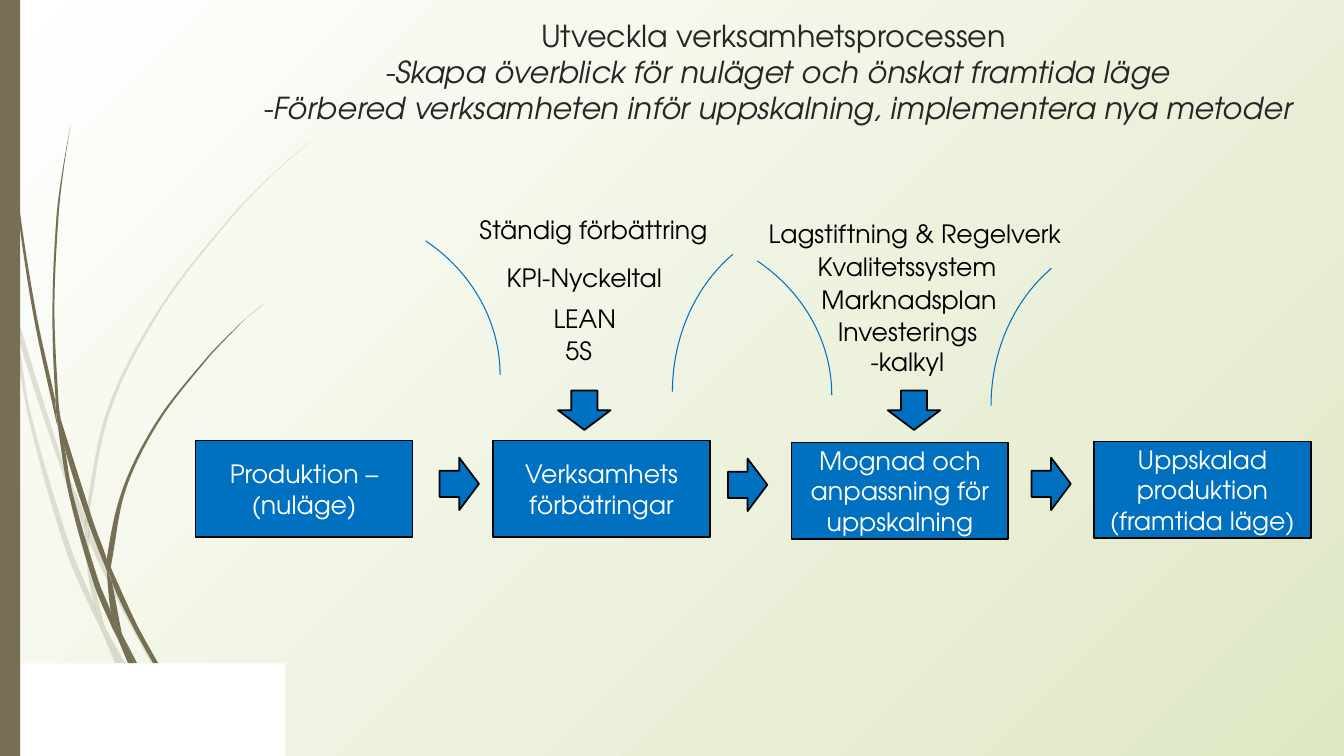
import math

import pptx
import pptx.dml.color
import pptx.enum.shapes
import pptx.enum.text
import pptx.oxml
import pptx.oxml.ns
import pptx.util

Inches = pptx.util.Inches
RGBColor = pptx.dml.color.RGBColor
SHAPES = pptx.enum.shapes.MSO_SHAPE
ANCHOR = pptx.enum.text.MSO_ANCHOR
CENTER = pptx.enum.text.PP_ALIGN.CENTER
qn = pptx.oxml.ns.qn
FONT = "TeX Gyre Adventor"
BLUE = RGBColor(0x00, 0x70, 0xC0)
BLACK = RGBColor(0x00, 0x00, 0x00)
WHITE = RGBColor(0xFF, 0xFF, 0xFF)
DARK_GREY = RGBColor(0x26, 0x26, 0x26)
OLIVE = RGBColor(0x76, 0x6F, 0x54)
PALE_GREEN = RGBColor(0xDF, 0xE8, 0xC4)

# Outline points of the grass blades, in inches.
PALE_BLADES = [
    [(.11, 3.09), (.09, 2.84), (0, 2.49), (0, 2.64), (.1, 3.03)],
    [(.58, 4.58), (.84, 5.26), (.85, 5.14), (.62, 4.57), (.14, 3.04), (.17, 3.31)],
    [(.92, 5.33), (.88, 5.23), (.88, 5.36), (1.23, 6.08), (1.5, 6.58), (1.55, 6.58), (1.27, 6.06)],
    [(1.19, 6.58), (1.24, 6.58), (1.05, 6.24)],
    [(.93, 5.99), (.7, 5.43), (.31, 4.12), (.17, 3.31), (.11, 3.09), (.28, 4.13), (.65, 5.45),
     (.92, 6.08), (1.01, 6.26), (.99, 6.2)],
    [(.84, 5.26), (.87, 5.67), (.93, 5.99), (.96, 6.07), (1.05, 6.24), (1.03, 6.19), (.91, 5.66),
     (.88, 5.36), (.88, 5.34)],
    [(.88, 5.12), (1.1, 4.06), (1.6, 3.07), (2.29, 2.17), (2.68, 1.76), (2.9, 1.56), (3.12, 1.37),
     (2.89, 1.56), (2.68, 1.75), (2.28, 2.16), (1.58, 3.06), (1.07, 4.05), (.85, 5.12), (.88, 5.23)],
    [(1.01, 6.26), (1.14, 6.58), (1.19, 6.58)],
    [(.88, 5.34), (.88, 5.23), (.85, 5.14), (.84, 5.26)],
    [(.96, 6.07), (.93, 5.99), (.99, 6.2), (1.01, 6.26), (1.19, 6.58), (1.05, 6.24)],
]
DARK_BLADES = [
    [(.07, .96), (.17, 2.04), (.33, 3.12), (.56, 4.19), (.57, 4.23), (.55, 4.02), (.55, 3.98),
     (.36, 3.11), (.19, 2.04), (.08, .96), (.05, .42), (.04, 0), (.03, 0), (.04, .42)],
    [(.88, 5.2), (1.06, 5.66), (1.06, 5.55), (.93, 5.19), (.6, 4.15), (.64, 4.44)],
    [(1.13, 5.7), (1.1, 5.63), (1.11, 5.77), (1.32, 6.22), (1.52, 6.58), (1.57, 6.58), (1.36, 6.2)],
    [(1.1, 6.07), (.98, 5.77), (.72, 4.89), (.64, 4.44), (.57, 4.19), (.68, 4.89), (.93, 5.79),
     (1.11, 6.22), (1.17, 6.34), (1.16, 6.3)],
    [(.6, 4.15), (.58, 3.98), (.54, 3.07), (.58, 2.15), (.63, 1.69), (.7, 1.24), (.62, 1.69),
     (.56, 2.15), (.52, 3.07), (.55, 3.94), (.6, 4.14)],
    [(1.33, 6.58), (1.36, 6.58), (1.22, 6.31)],
    [(.57, 4.19), (.64, 4.44), (.6, 4.15), (.55, 3.95), (.55, 3.98)],
    [(1.11, 5.56), (1.25, 4.85), (1.58, 4.18), (2.05, 3.57), (2.31, 3.29), (2.45, 3.15), (2.61, 3.02),
     (2.45, 3.15), (2.31, 3.28), (2.04, 3.56), (1.56, 4.17), (1.22, 4.84), (1.06, 5.54), (1.1, 5.63)],
    [(1.17, 6.34), (1.27, 6.58), (1.31, 6.58)],
    [(1.06, 5.66), (1.1, 6.07), (1.16, 6.2), (1.22, 6.31), (1.21, 6.29), (1.11, 5.77), (1.09, 5.72)],
    [(1.06, 5.66), (1.09, 5.71), (1.11, 5.76), (1.1, 5.63), (1.06, 5.55)],
    [(1.16, 6.2), (1.1, 6.07), (1.16, 6.3), (1.17, 6.34), (1.3, 6.58), (1.33, 6.58), (1.22, 6.31)],
]
TITLE_LINES = [
    "Utveckla verksamhetsprocessen ",
    "-Skapa överblick för nuläget och önskat framtida läge",
    "-Förbered verksamheten inför uppskalning, implementera nya metoder"]
STAGES = [
    (1.94, 4.37, ["Produktion –(nuläge)"]), (4.89, 4.37, ["Verksamhets", "förbätringar"]),
    (7.85, 4.39, ["Mognad och anpassning för uppskalning"]),
    (10.85, 4.38, ["Uppskalad produktion", "(framtida läge)"])]
STAGE_ARROWS = [(4.36, 4.54), (7.22, 4.55), (10.23, 4.54)]
IMPROVEMENT_LABELS = [
    (4.46, 1.96, 2.85, .63, "Ständig förbättring"), (4.55, 2.27, 2.49, .96, "KPI-Nyckeltal"),
    (4.84, 2.84, 1.92, .63, "LEAN"), (4.78, 3.13, 1.92, .7, "5S")]
MATURITY_LABELS = [
    (7.37, 2, 3.41, .63, "Lagstiftning & Regelverk"), (7.75, 2.37, 2.49, .54, "Kvalitetssystem"),
    (7.96, 2.62, 2.11, .7, "Marknadsplan"), (8.19, 3.12, 1.62, .63, "Investerings -kalkyl")]

def add_run(para, text, size=18, color=BLACK, italic=False):
    span = para.add_run()
    span.text = text
    span.font.name = FONT
    span.font.size = pptx.util.Pt(size)
    span.font.color.rgb = color
    span.font.italic = italic

def style_shape(shape, fill=None, line=None, weight=1.25):
    shape.shadow.inherit = False
    for paint, color in ((shape.fill, fill), (shape.line.fill, line)):
        if color is None:
            paint.background()
        else:
            paint.solid()
            paint.fore_color.rgb = color
    if line is not None:
        shape.line.width = pptx.util.Pt(weight)

def add_shape(slide, kind, *box, **style):
    shape = slide.shapes.add_shape(kind, *map(Inches, box))
    style_shape(shape, **style)
    return shape

def add_text_shape(slide, box, lines, color=BLACK, **style):
    shape = add_shape(slide, SHAPES.FLOWCHART_PROCESS, *box, **style)
    frame = shape.text_frame
    frame.word_wrap = True
    frame.vertical_anchor = ANCHOR.MIDDLE
    for index, line in enumerate(lines):
        para = frame.add_paragraph() if index else frame.paragraphs[0]
        para.alignment = CENTER
        add_run(para, line, color=color)

def add_arrow(slide, left, top, rotation=0):
    arrow = add_shape(slide, SHAPES.RIGHT_ARROW, left, top, .39, .52, fill=BLUE, line=BLACK)
    arrow.rotation = rotation

def add_arc(slide, *box, start, mirrored=False):
    arc = add_shape(slide, SHAPES.ARC, *box, line=BLUE, weight=.75)
    arc.adjustments[0], arc.adjustments[1] = start, 0
    if mirrored:
        arc.element.spPr.find(qn("a:xfrm")).set("flipH", "1")

def tangent(before, point, after):
    """Return the unit direction through a point, or none at a sharp corner."""
    turn = (math.atan2(after[1] - point[1], after[0] - point[0])
            - math.atan2(point[1] - before[1], point[0] - before[0]))
    if math.cos(turn) < .7:
        return 0, 0
    dx, dy = after[0] - before[0], after[1] - before[1]
    return dx / math.hypot(dx, dy), dy / math.hypot(dx, dy)

def round_edges(blade):
    """Turn the straight sides of a closed freeform into curves."""
    sides = list(blade.element.iter(qn("a:lnTo")))
    points = [(int(side[0].get("x")), int(side[0].get("y"))) for side in sides]
    count = len(points)
    slopes = [tangent(points[i - 1], points[i], points[(i + 1) % count]) for i in range(count)]
    for index, side in enumerate(sides):
        start, end = points[index - 1], points[index]
        third = math.dist(start, end) / 3
        controls = [[p + s * third for p, s in zip(start, slopes[index - 1])],
                    [p - s * third for p, s in zip(end, slopes[index])], end]
        marks = "".join(f'<a:pt x="{round(x)}" y="{round(y)}"/>' for x, y in controls)
        side.getparent().replace(side, pptx.oxml.parse_xml(
            f'<a:cubicBezTo {pptx.oxml.ns.nsdecls("a")}>{marks}</a:cubicBezTo>'))

def add_blade(slide, outline, opacity):
    points = [(Inches(x), Inches(y)) for x, y in outline]
    builder = slide.shapes.build_freeform(*points[0])
    builder.add_line_segments(points[1:] + points[:1], close=True)
    blade = builder.convert_to_shape()
    style_shape(blade, fill=OLIVE)
    round_edges(blade)
    if opacity < 100:
        blade.element.spPr.find(".//" + qn("a:srgbClr")).append(pptx.oxml.parse_xml(
            f'<a:alpha {pptx.oxml.ns.nsdecls("a")} val="{opacity * 1000}"/>'))

def paint_background(slide):
    """Fill with a gradient that spreads from the top left corner."""
    fill = slide.background.fill
    fill.gradient()
    for stop, color in zip(fill.gradient_stops, (WHITE, PALE_GREEN)):
        stop.color.rgb = color
    gradient = slide.element.find(".//" + qn("a:gradFill"))
    gradient.replace(gradient.find(qn("a:lin")), pptx.oxml.parse_xml(
        f'<a:path {pptx.oxml.ns.nsdecls("a")} path="circle">'
        '<a:fillToRect r="100000" b="100000"/></a:path>'))

def draw_decoration(slide):
    for blades, opacity in ((PALE_BLADES, 20), (DARK_BLADES, 100)):
        for outline in blades:
            add_blade(slide, outline, opacity)
    add_shape(slide, SHAPES.RECTANGLE, 0, 0, .2, 7.5, fill=OLIVE)
    add_shape(slide, SHAPES.RECTANGLE, .21, 6.58, 2.62, .92, fill=WHITE)

def fill_title(title, *box):
    title.left, title.top, title.width, title.height = map(Inches, box)
    frame = title.text_frame
    frame.word_wrap = True
    frame.auto_size = pptx.enum.text.MSO_AUTO_SIZE.NONE
    frame.vertical_anchor = ANCHOR.TOP
    para = frame.paragraphs[0]
    para.alignment = CENTER
    for index, line in enumerate(TITLE_LINES):
        if index:
            para.add_line_break()
        add_run(para, line, size=21.6, color=DARK_GREY, italic=index > 0)

def draw_funnel(slide, left_arc, right_arc, arrow_left, labels):
    """Draw labels between two arcs, with an arrow down to the stage below."""
    add_arc(slide, *left_arc, 3.67, 3.32, start=185.71)
    add_arc(slide, *right_arc, 2.96, 3.39, start=181.73, mirrored=True)
    for *box, text in labels:
        add_text_shape(slide, box, [text])
    add_arrow(slide, arrow_left, 3.81, rotation=90)

def draw_process(slide):
    for left, top, lines in STAGES:
        add_text_shape(slide, (left, top, 2.15, .96), lines, color=WHITE, fill=BLUE, line=BLACK)
    for left, top in STAGE_ARROWS:
        add_arrow(slide, left, top)

def main():
    deck = pptx.Presentation()
    deck.slide_width, deck.slide_height = Inches(13.33), Inches(7.5)
    page = deck.slides.add_slide(deck.slide_layouts[5])
    paint_background(page)
    draw_decoration(page)
    fill_title(page.shapes.title, 2.08, .12, 11.27, 1)
    draw_process(page)
    draw_funnel(page, (1.29, 2.06), (6.67, 2.19), 5.6, IMPROVEMENT_LABELS)
    draw_funnel(page, (4.58, 2.26), (9.83, 2.33), 8.87, MATURITY_LABELS)
    deck.save("out.pptx")

if __name__ == "__main__":
    main()
